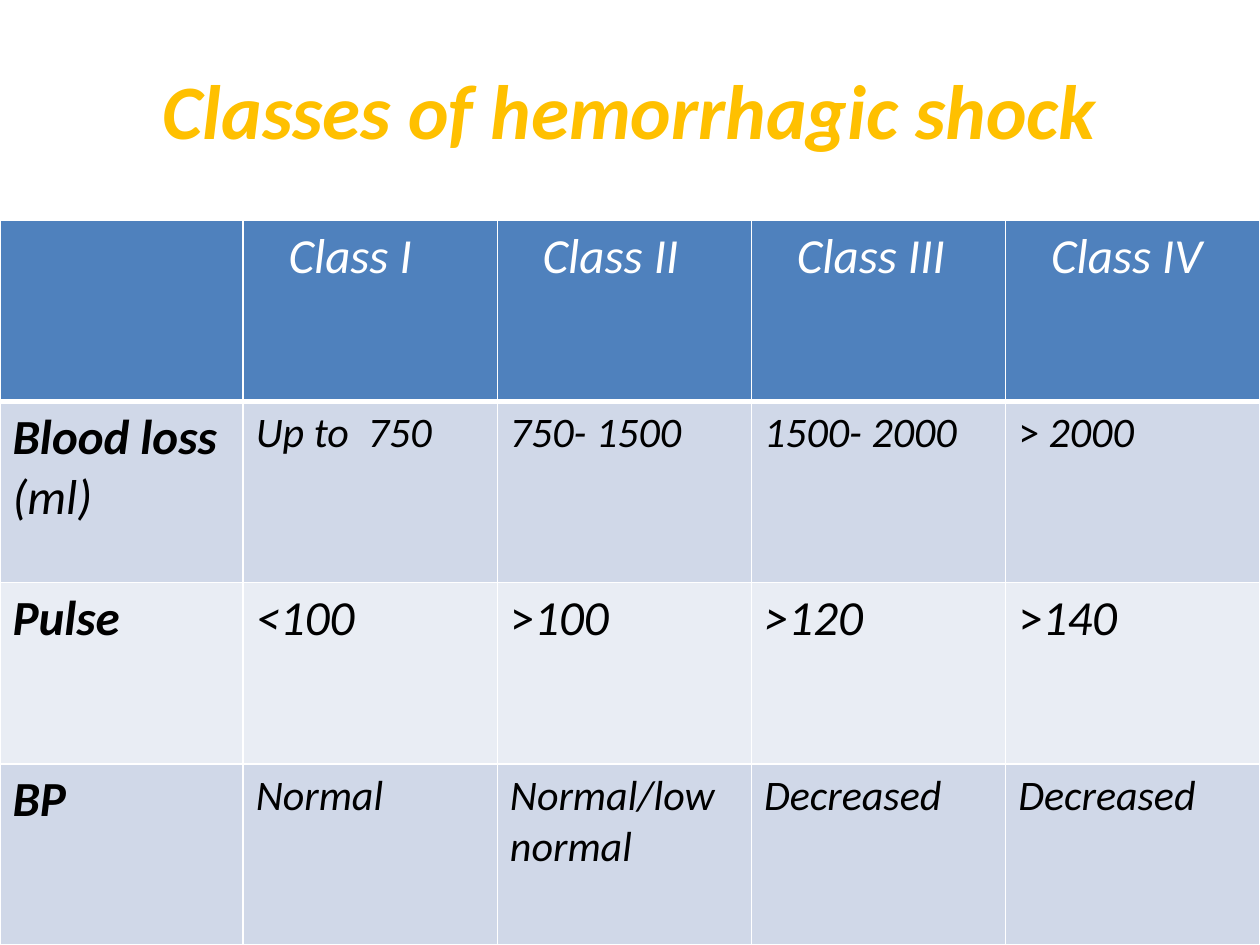
import pptx
import pptx.dml.color
import pptx.enum.text
import pptx.oxml
import pptx.oxml.ns
import pptx.util

WIDTH, HEIGHT = 10, 7.5
SHARES = [0.193] + [0.20175] * 4
HEADER, BANDS = "4F81BD", ("E9EDF4", "D0D8E8")
BOLD, UPRIGHT, SMALL = {"bold": True}, {"italic": False}, {"size": 24}
ROWS = [
    [[[]]] + [[[(f"Class {n}", {"color": "FFFFFF"})]] for n in ("I", "II", "III", "IV")],
    [
        [[("Blood loss ", BOLD), ("(ml)", {})]],
        [[("Up to  750", SMALL)]],
        [[("750- 1500", SMALL)]],
        [[("1500- 2000", SMALL)]],
        [[("> ", SMALL | UPRIGHT), ("2000", SMALL)]],
    ],
    [
        [[("Pulse", BOLD)]],
        [[("<100", {})]],
        [[(">", UPRIGHT), ("100", {})]],
        [[(">120", {})]],
        [[(">", UPRIGHT), ("140", {})]],
    ],
    [
        [[("BP", BOLD)]],
        [[("Normal", SMALL)]],
        [[("Normal/low", SMALL)], [("normal", SMALL)]],
        [[("Decreased", SMALL)]],
        [[("Decreased", SMALL)]],
    ],
]


def rgb(value):
    """Turn a hex string into a colour."""
    return pptx.dml.color.RGBColor.from_string(value)


def write(tf, paragraphs, align=None):
    """Fill a text frame with paragraphs of (text, format) runs."""
    for i, runs in enumerate(paragraphs):
        p = tf.paragraphs[0] if i == 0 else tf.add_paragraph()
        p.alignment = align
        for text, changes in runs:
            style = {"name": "Calibri", "size": 28, "bold": False, "italic": True, "color": "000000"} | changes
            r = p.add_run()
            r.text = text
            r.font.color.rgb = rgb(style.pop("color"))
            style["size"] = pptx.util.Pt(style["size"])
            for name, value in style.items():
                setattr(r.font, name, value)


def set_borders(cell, widths):
    """Draw white borders, given widths in points by side."""
    tc_pr = cell._tc.get_or_add_tcPr()
    for side, width in widths.items():
        tc_pr.append(pptx.oxml.parse_xml(
            f'<a:ln{side} {pptx.oxml.ns.nsdecls("a")} w="{pptx.util.Pt(width)}">'
            f'<a:solidFill><a:srgbClr val="FFFFFF"/></a:solidFill></a:ln{side}>'))


def add_title(s, box, text):
    """Place the centred slide title in the box."""
    tf = s.shapes.add_textbox(*map(pptx.util.Inches, box)).text_frame
    tf.word_wrap = True
    tf.vertical_anchor = pptx.enum.text.MSO_ANCHOR.MIDDLE
    write(tf, [[(text, {"size": 44, "bold": True, "color": "FFC000"})]], pptx.enum.text.PP_ALIGN.CENTER)


def add_class_table(s, box, rows):
    """Place the table of shock classes in the box."""
    table = s.shapes.add_table(len(rows), len(SHARES), *map(pptx.util.Inches, box)).table
    for column, share in zip(table.columns, SHARES):
        column.width = pptx.util.Inches(box[2] * share)
    for i, row in enumerate(rows):
        table.rows[i].height = pptx.util.Inches(box[3] / len(rows))
        for j, paragraphs in enumerate(row):
            cell = table.cell(i, j)
            set_borders(cell, {"L": 1, "R": 1, "T": 1, "B": 1 if i else 3})
            cell.fill.solid()
            cell.fill.fore_color.rgb = rgb(BANDS[i % 2] if i else HEADER)
            if i == 0:
                cell.margin_left = pptx.util.Inches(0.36)
            write(cell.text_frame, paragraphs)


def main():
    """Build and save the slide."""
    prs = pptx.Presentation()
    prs.slide_width, prs.slide_height = map(pptx.util.Inches, (WIDTH, HEIGHT))
    s = prs.slides.add_slide(prs.slide_layouts[6])
    add_title(s, (WIDTH * 0.05, HEIGHT * 0.04, WIDTH * 0.9, HEIGHT * 0.15), "Classes of hemorrhagic shock")
    top = 1.75
    add_class_table(s, (0, top, WIDTH, HEIGHT - top), ROWS)
    prs.save("out.pptx")


if __name__ == "__main__":
    main()
